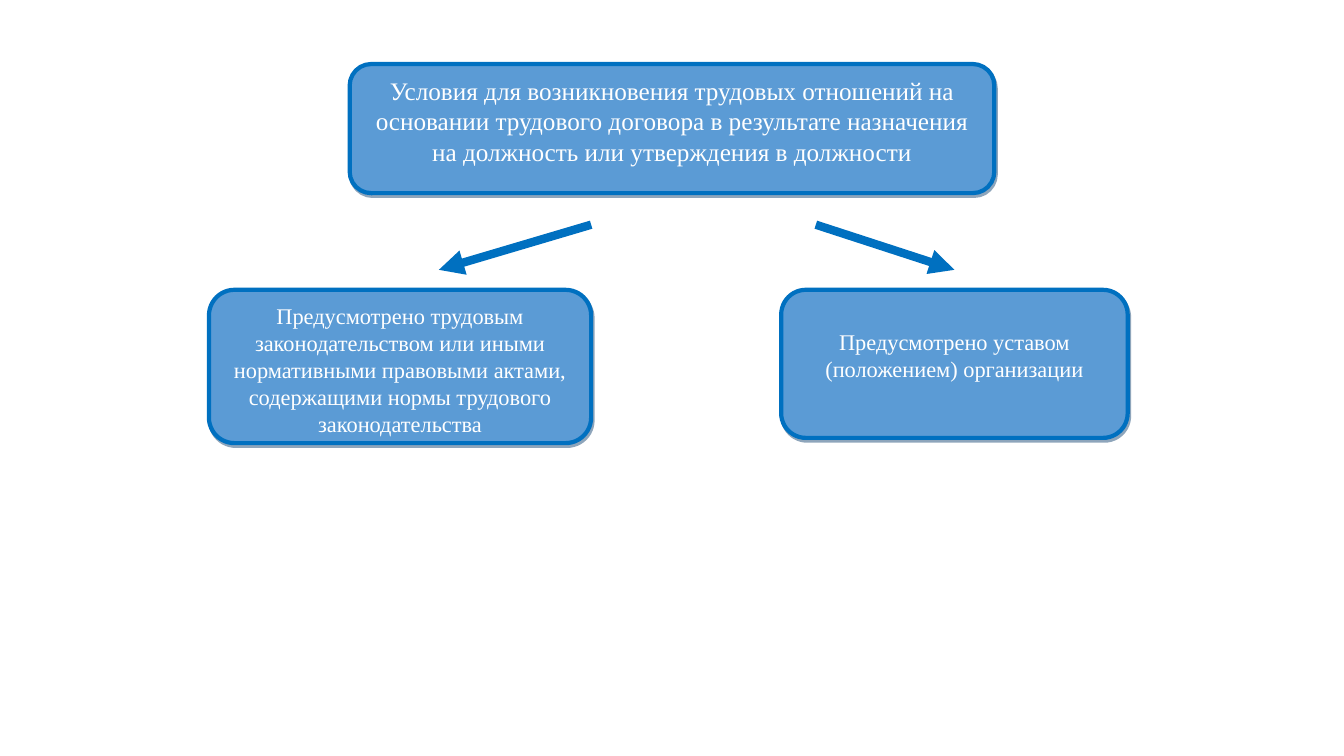
from lxml import etree
from pptx import Presentation
from pptx import util as u
from pptx.dml.color import RGBColor
from pptx.enum import shapes, text
from pptx.oxml import ns

THEME = {
    "fill": RGBColor.from_string("5B9BD5"),
    "line": RGBColor.from_string("0070C0"),
    "text": RGBColor.from_string("FFFFFF"),
    "shadow": "1F4D78",
    "font": "Times New Roman",
    "title_size": u.Pt(18),
    "body_size": u.Pt(16),
    "border": u.Pt(3),
    "arrow": u.Pt(6),
}


def px(length):
    return u.Emu(length * 9525)


def add_effect_list(shape_properties):
    return etree.SubElement(shape_properties, ns.qn("a:effectLst"))


presentation = Presentation()
presentation.slide_width, presentation.slide_height = px(1280), px(720)
slide = presentation.slides.add_slide(presentation.slide_layouts[6])

# Boxes: left, top, width, height, top margin, type size, wording
boxes = [
    (333, 61, 614, 123, 5, "title_size",
     "Условия для возникновения трудовых отношений на основании трудового "
     "договора в результате назначения на должность или утверждения в должности"),
    (199, 276, 364, 146, 5, "body_size",
     "Предусмотрено трудовым законодательством или иными нормативными правовыми "
     "актами, содержащими нормы трудового законодательства"),
    (744, 276, 330, 141, 30, "body_size",
     "Предусмотрено уставом (положением) организации"),
]
for left, top, width, height, margin, size, wording in boxes:
    shape = slide.shapes.add_shape(
        shapes.MSO_SHAPE.ROUNDED_RECTANGLE, px(left), px(top), px(width), px(height))
    shape.fill.solid()
    shape.fill.fore_color.rgb = THEME["fill"]
    shape.line.color.rgb = THEME["line"]
    shape.line.width = THEME["border"]

    # Hard shadow just below the box
    effects = add_effect_list(shape.element.spPr)
    shadow = etree.SubElement(
        effects, ns.qn("a:outerShdw"), blurRad="0", dist=str(u.Pt(2.2)),
        dir=str(63 * 60000), algn="ctr", rotWithShape="0")
    colour = etree.SubElement(shadow, ns.qn("a:srgbClr"), val=THEME["shadow"])
    etree.SubElement(colour, ns.qn("a:alpha"), val="50000")

    # Wording
    frame = shape.text_frame
    frame.word_wrap = True
    frame.vertical_anchor = text.MSO_ANCHOR.TOP
    frame.margin_top = px(margin)
    paragraph = frame.paragraphs[0]
    paragraph.alignment = text.PP_ALIGN.CENTER
    run = paragraph.add_run()
    run.text = wording
    run.font.name = THEME["font"]
    run.font.size = THEME[size]
    run.font.color.rgb = THEME["text"]

# Arrows from the condition to its two cases
for start, end in [(563, 418), (777, 909)]:
    arrow = slide.shapes.add_connector(
        shapes.MSO_CONNECTOR.STRAIGHT, px(start), px(214), px(end), px(257))
    arrow.line.color.rgb = THEME["line"]
    arrow.line.width = THEME["arrow"]
    etree.SubElement(arrow.line._get_or_add_ln(), ns.qn("a:tailEnd"), type="triangle")
    add_effect_list(arrow.element.spPr)

presentation.save("out.pptx")
